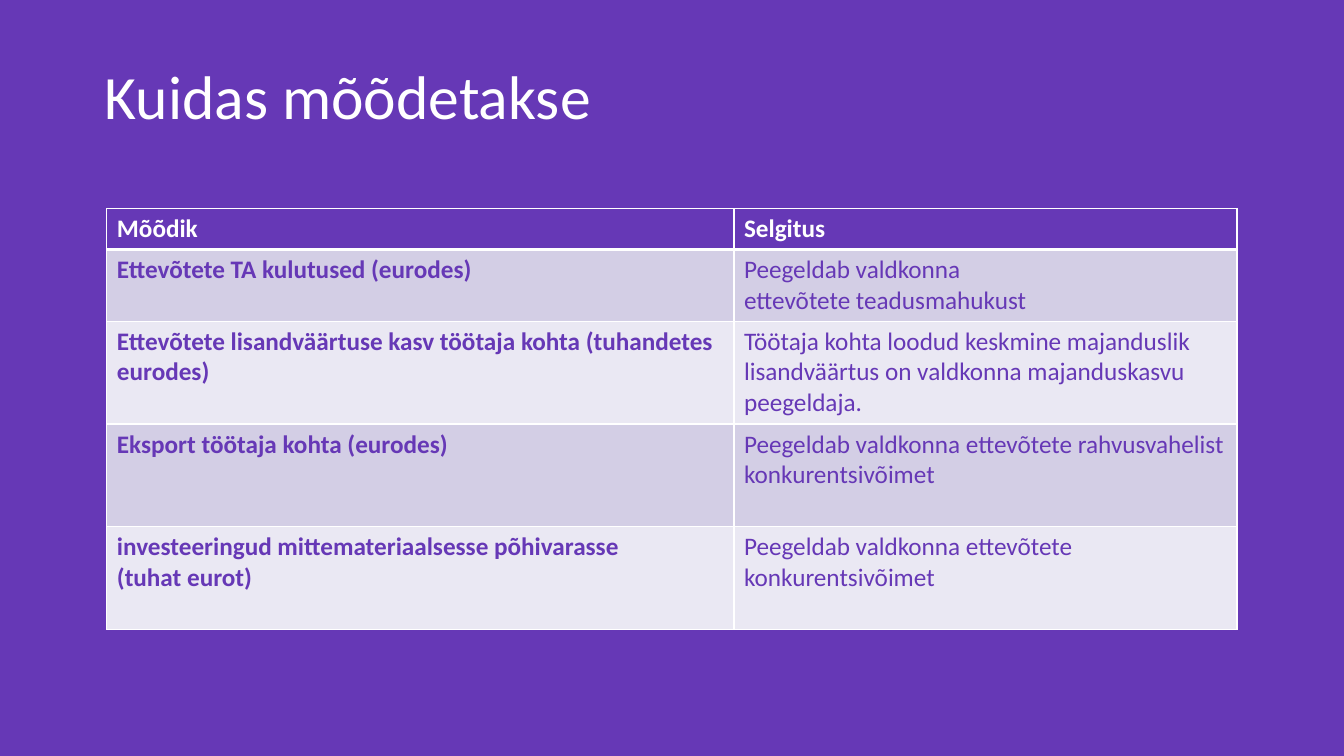
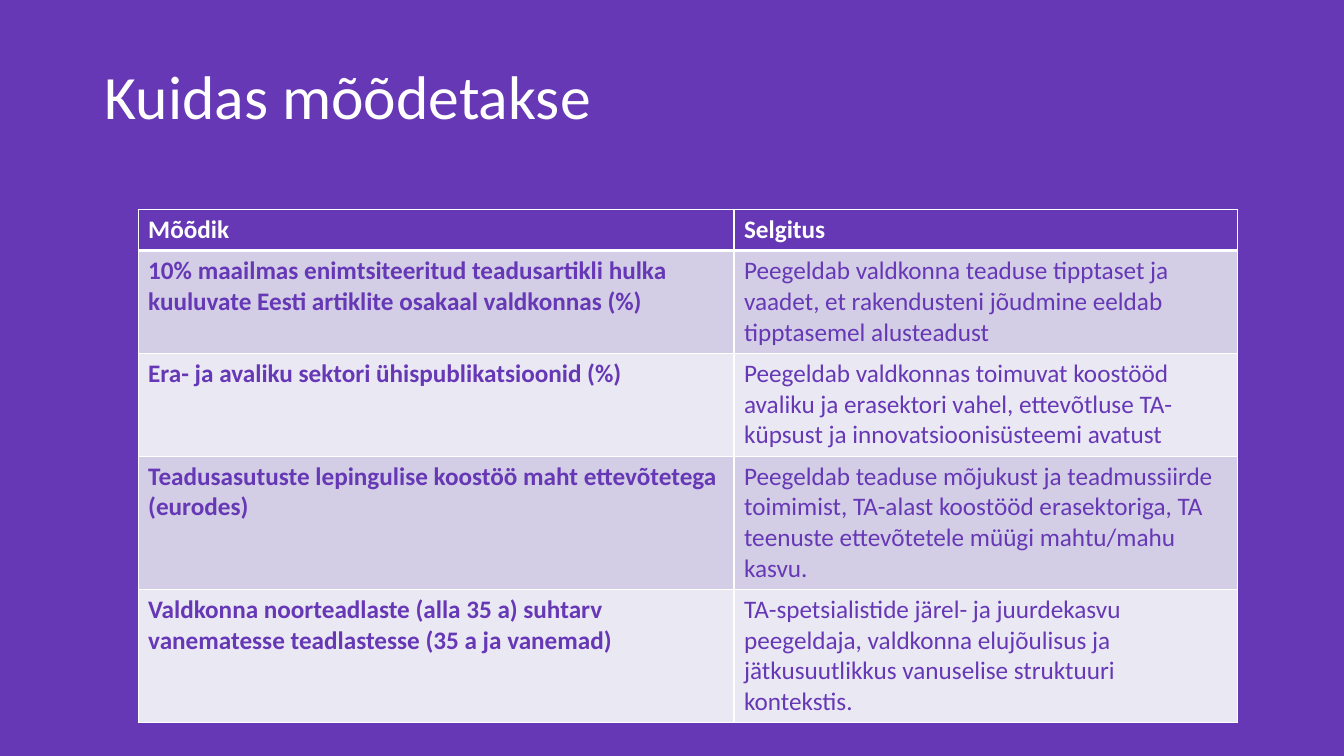
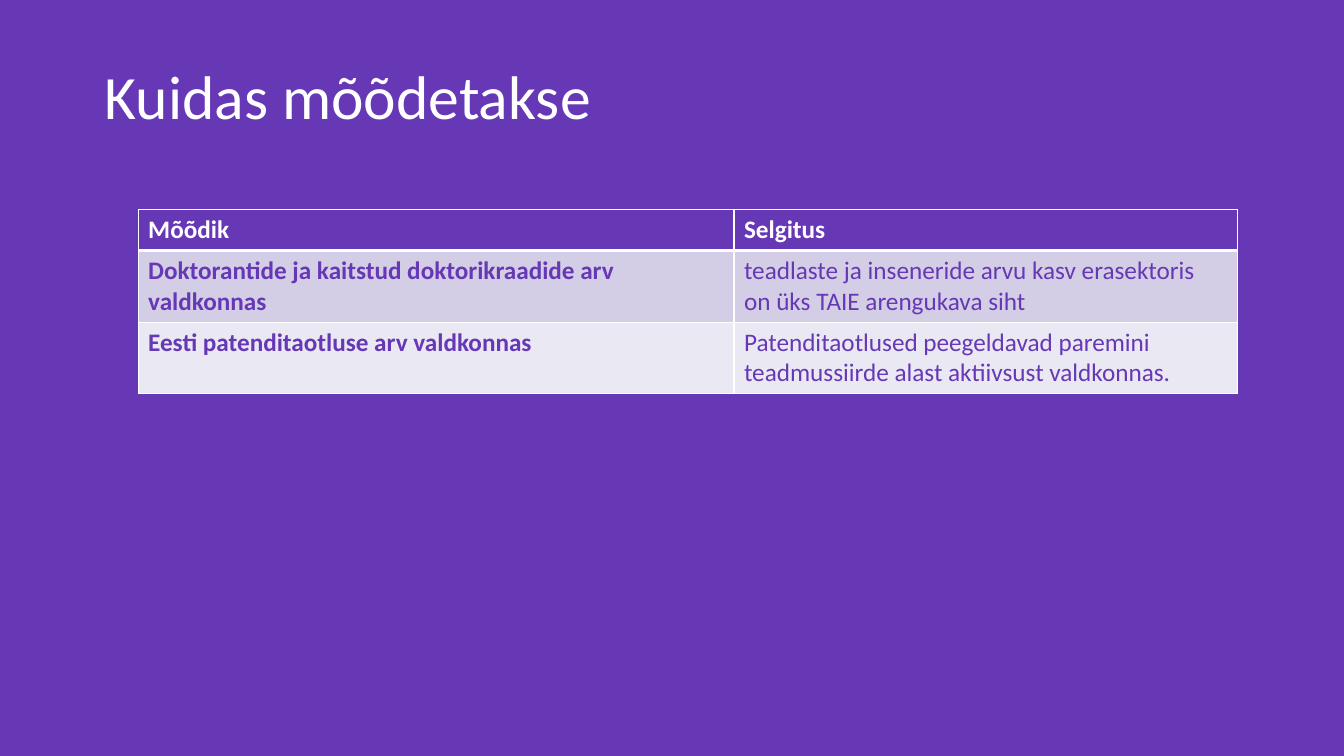
from dataclasses import dataclass

from lxml.etree import SubElement as Sub
from pptx import Presentation
from pptx.dml.color import RGBColor as Rgb
from pptx.enum.text import MSO_ANCHOR as Anchor, MSO_AUTO_SIZE as Fit, PP_ALIGN as Align
from pptx.oxml.ns import qn
from pptx.util import Emu, Pt

SCALE = 9144
FONT = "Calibri"
HUES = {"base": "6638B6", "text": "FFFFFF", "dark": "D3CEE5", "light": "EAE8F3"}
TITLE = "Kuidas mõõdetakse"
RIGHT = 1227
NOTE_W = 499


@dataclass(frozen=True)
class Row:
    name: str
    note: str
    lines: int


@dataclass(frozen=True)
class Page:
    left: int
    top: int
    rows: tuple[Row, ...]


HEAD = Row("Mõõdik", "Selgitus", 1)
PAGES = (
    Page(106, 207, (
        Row("Ettevõtete TA kulutused (eurodes)",
            "Peegeldab valdkonna\nettevõtete teadusmahukust", 2),
        Row("Ettevõtete lisandväärtuse kasv töötaja kohta (tuhandetes\neurodes)",
            "Töötaja kohta loodud keskmine majanduslik\n"
            "lisandväärtus on valdkonna majanduskasvu\npeegeldaja.", 3),
        Row("Eksport töötaja kohta (eurodes)",
            "Peegeldab valdkonna ettevõtete rahvusvahelist\nkonkurentsivõimet", 3),
        Row("investeeringud mittemateriaalsesse põhivarasse\n(tuhat eurot)",
            "Peegeldab valdkonna ettevõtete konkurentsivõimet", 3),
    )),
    Page(137, 208, (
        Row("10% maailmas enimtsiteeritud teadusartikli hulka kuuluvate "
            "Eesti artiklite osakaal valdkonnas (%)",
            "Peegeldab valdkonna teaduse tipptaset ja vaadet, et rakendusteni "
            "jõudmine eeldab tipptasemel alusteadust", 3),
        Row("Era- ja avaliku sektori ühispublikatsioonid (%)",
            "Peegeldab valdkonnas toimuvat koostööd avaliku ja erasektori vahel, "
            "ettevõtluse TA-küpsust ja innovatsioonisüsteemi avatust", 3),
        Row("Teadusasutuste lepingulise koostöö maht ettevõtetega (eurodes)",
            "Peegeldab teaduse mõjukust ja teadmussiirde\n"
            "toimimist, TA-alast koostööd erasektoriga, TA teenuste "
            "ettevõtetele müügi mahtu/mahu kasvu.", 4),
        Row("Valdkonna noorteadlaste (alla 35 a) suhtarv vanematesse "
            "teadlastesse (35 a ja vanemad)",
            "TA-spetsialistide järel- ja juurdekasvu peegeldaja, valdkonna "
            "elujõulisus ja jätkusuutlikkus vanuselise struktuuri kontekstis.", 4),
    )),
    Page(137, 208, (
        Row("Doktorantide ja kaitstud doktorikraadide arv valdkonnas",
            "teadlaste ja inseneride arvu kasv erasektoris\n"
            "on üks TAIE arengukava siht", 2),
        Row("Eesti patenditaotluse arv valdkonnas",
            "Patenditaotlused peegeldavad paremini teadmussiirde alast "
            "aktiivsust valdkonnas.", 2),
    )),
)


def px(size: int) -> Emu:
    return Emu(size * SCALE)


def hue(key: str) -> Rgb:
    return Rgb.from_string(HUES[key])


def add_run(para, text: str, size: int, key: str, bold: bool = False) -> None:
    run = para.add_run()
    run.text = text
    font = run.font
    font.name, font.size, font.bold = FONT, Pt(size), bold
    font.color.rgb = hue(key)


def set_edges(cell, top: int, base: int) -> None:
    props = cell._tc.get_or_add_tcPr()
    for side, width in (("L", 1), ("R", 1), ("T", top), ("B", base)):
        line = Sub(props, qn(f"a:ln{side}"), w=str(Pt(width)))
        fill = Sub(line, qn("a:solidFill"))
        Sub(fill, qn("a:srgbClr"), val=HUES["text"])


def fill_cell(cell, text: str, row: int, bold: bool) -> None:
    set_edges(cell, 3 if row == 1 else 1, 3 if row == 0 else 1)
    cell.fill.solid()
    cell.fill.fore_color.rgb = hue("base" if row == 0 else "dark" if row % 2 else "light")
    frame = cell.text_frame
    for i, part in enumerate(text.split("\n")):
        para = frame.add_paragraph() if i else frame.paragraphs[0]
        add_run(para, part, 18, "base" if row else "text", bold)


def add_grid(slide, page: Page) -> None:
    rows = (HEAD, *page.rows)
    tall = [round(10 + 30.5 * row.lines) for row in rows]
    wide = (RIGHT - page.left - NOTE_W, NOTE_W)
    grid = slide.shapes.add_table(len(rows), 2, px(page.left), px(page.top),
                                  px(sum(wide)), px(sum(tall))).table
    for col, width in zip(grid.columns, wide):
        col.width = px(width)
    for i, row in enumerate(rows):
        grid.rows[i].height = px(tall[i])
        fill_cell(grid.cell(i, 0), row.name, i, True)
        fill_cell(grid.cell(i, 1), row.note, i, i == 0)


def set_style(deck):
    fill = deck.slide_master.background.fill
    fill.solid()
    fill.fore_color.rgb = hue("base")
    layout = deck.slide_layouts[5]
    title = layout.placeholders[0]
    title.left, title.top, title.width, title.height = map(px, (94, 0, 886, 197))
    return layout


def add_title(slide) -> None:
    frame = slide.shapes.title.text_frame
    frame.auto_size = Fit.NONE
    frame.vertical_anchor = Anchor.MIDDLE
    para = frame.paragraphs[0]
    para.alignment = Align.LEFT
    para.line_spacing = 0.9
    add_run(para, TITLE, 44, "text")


def main() -> None:
    deck = Presentation()
    deck.slide_width, deck.slide_height = px(1333), px(750)
    layout = set_style(deck)
    for page in PAGES:
        slide = deck.slides.add_slide(layout)
        add_title(slide)
        add_grid(slide, page)
    deck.save("out.pptx")


if __name__ == "__main__":
    main()
